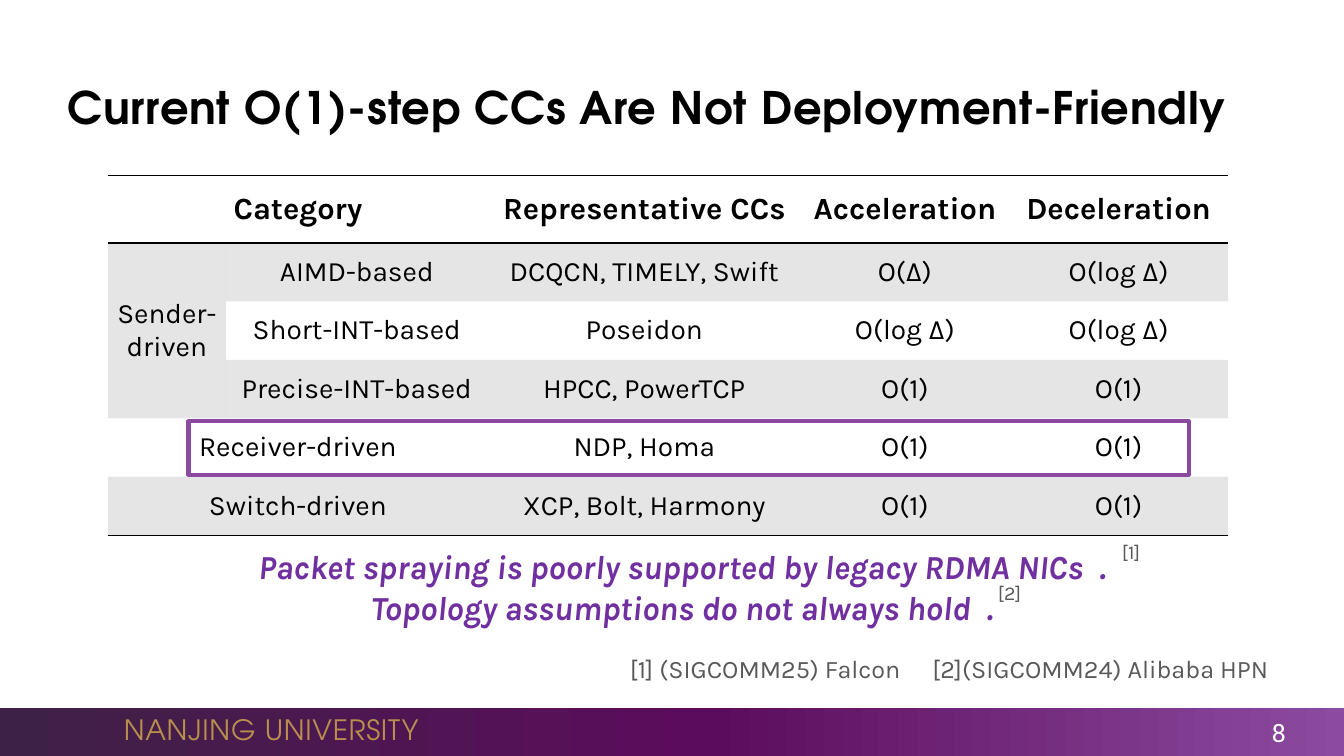
from copy import deepcopy
from lxml.etree import SubElement
from pptx import Presentation
from pptx.dml.color import RGBColor
from pptx.enum.shapes import MSO_SHAPE
from pptx.enum.text import MSO_ANCHOR, MSO_AUTO_SIZE, PP_ALIGN
from pptx.oxml import parse_xml
from pptx.oxml.ns import nsdecls, qn
from pptx.util import Inches, Pt

BLACK = RGBColor(0, 0, 0)
WHITE = RGBColor(255, 255, 255)
GRAY = RGBColor(0x59, 0x59, 0x59)
BAND = RGBColor(0x80, 0x80, 0x80)
GOLD = RGBColor(0xB8, 0x8F, 0x4C)
VIOLET = RGBColor(0x70, 0x30, 0xA0)
FRAME = RGBColor(0x8B, 0x4A, 0x9F)
FOOTER_STOPS = [
    (0, RGBColor(0x3E, 0x21, 0x46)),
    (0.53, RGBColor(0x5C, 0x0C, 0x5C)),
    (1, RGBColor(0x8C, 0x4B, 0xA0)),
]
NO_STYLE = "{2D5ABB26-0587-4C30-8999-92F81FD0307C}"

presentation = Presentation()
presentation.slide_width = Inches(13.33)
presentation.slide_height = Inches(7.5)
slide = presentation.slides.add_slide(presentation.slide_layouts[5])


def format_text(frame, size, font, color, align=PP_ALIGN.LEFT, bold=False, spacing=0):
    for paragraph in frame.paragraphs:
        paragraph.alignment = align
        for run in paragraph.runs:
            run.font.size = Pt(size)
            run.font.name = font
            run.font.color.rgb = color
            run.font.bold = bold
            if spacing:
                run.font._element.set("spc", str(spacing))


def add_text(box, text, anchor=MSO_ANCHOR.TOP, wrap=True):
    frame = slide.shapes.add_textbox(*map(Inches, box)).text_frame
    frame.word_wrap = wrap
    frame.vertical_anchor = anchor
    frame.text = text
    return frame


footer = slide.shapes.add_shape(
    MSO_SHAPE.RECTANGLE, Inches(0), Inches(7.02), Inches(13.33), Inches(0.48))
footer.shadow.inherit = False
footer.line.fill.background()
footer.fill.gradient()
footer.fill.gradient_angle = 0
stop_list = footer._element.spPr.find(".//" + qn("a:gsLst"))
stop_list.insert(1, deepcopy(stop_list[0]))
for stop, (position, color) in zip(footer.fill.gradient_stops, FOOTER_STOPS):
    stop.position = position
    stop.color.rgb = color

university = add_text((1.13, 7.02, 3.17, 0.44), "NANJING UNIVERSITY", MSO_ANCHOR.MIDDLE, False)
format_text(university, 20, "TeX Gyre Adventor", GOLD, spacing=50)
page_number = add_text((11.79, 7.09, 1.06, 0.35), "8", MSO_ANCHOR.MIDDLE)
format_text(page_number, 18, "Roboto Slab", WHITE, PP_ALIGN.RIGHT)

title = slide.shapes.title
title.left, title.top, title.width, title.height = map(Inches, (0.57, 0.67, 12, 0.77))
title.text_frame.text = "Current O(1)-step CCs Are Not Deployment-Friendly"
title.text_frame.auto_size = MSO_AUTO_SIZE.NONE
title.text_frame.vertical_anchor = MSO_ANCHOR.MIDDLE
format_text(title.text_frame, 32, "TeX Gyre Adventor", BLACK, bold=True, spacing=50)

ROW_HEIGHTS = [0.67] + [0.58] * 5
category_rows = [
    ["Category", ""],
    ["Sender-driven", "AIMD-based"],
    ["", "Short-INT-based"],
    ["", "Precise-INT-based"],
    ["Receiver-driven", ""],
    ["Switch-driven", ""],
]
algorithm_rows = [
    ["Representative CCs"],
    ["DCQCN, TIMELY, Swift"],
    ["Poseidon"],
    ["HPCC, PowerTCP"],
    ["NDP, Homa"],
    ["XCP, Bolt, Harmony"],
]
speed_rows = [
    ["Acceleration", "Deceleration"],
    ["O(Δ)", "O(log Δ)"],
    ["O(log Δ)", "O(log Δ)"],
    ["O(1)", "O(1)"],
    ["O(1)", "O(1)"],
    ["O(1)", "O(1)"],
]
category_merges = [((0, 0), (0, 1)), ((1, 0), (3, 0)), ((4, 0), (4, 1)), ((5, 0), (5, 1))]
sections = [
    (1.07, [1.17, 2.6], category_rows, category_merges),
    (4.84, [3.1], algorithm_rows, []),
    (7.94, [2.07, 2.17], speed_rows, []),
]

for left, widths, rows, merges in sections:
    table = slide.shapes.add_table(
        len(rows), len(widths), Inches(left), Inches(1.74),
        Inches(sum(widths)), Inches(sum(ROW_HEIGHTS))).table
    table.first_row = False
    table.horz_banding = False
    table._tbl.tblPr.find(qn("a:tableStyleId")).text = NO_STYLE
    for column, width in zip(table.columns, widths):
        column.width = Inches(width)
    for row, height in zip(table.rows, ROW_HEIGHTS):
        row.height = Inches(height)
    for first, last in merges:
        table.cell(*first).merge(table.cell(*last))

    for row_index, row in enumerate(rows):
        header = row_index == 0
        for column_index, text in enumerate(row):
            cell = table.cell(row_index, column_index)
            cell.text = text
            cell.vertical_anchor = MSO_ANCHOR.MIDDLE
            format_text(cell.text_frame, 22 if header else 20, "Karla", BLACK,
                        PP_ALIGN.CENTER, bold=header)
            if not header:
                cell.margin_left = cell.margin_right = Inches(0.03)
                cell.margin_top = cell.margin_bottom = Inches(0.03)
            if row_index % 2:
                cell.fill.solid()
                cell.fill.fore_color.rgb = BAND
            else:
                cell.fill.background()
            if row_index == len(rows) - 1:
                cell.fill.solid()
                cell.fill.fore_color.rgb = BAND
            properties = cell._tc.get_or_add_tcPr()
            for shade in properties.iter(qn("a:srgbClr")):
                SubElement(shade, qn("a:alpha")).set("val", "20000")
            edges = {0: ["lnT", "lnB"], len(rows) - 1: ["lnB"]}.get(row_index, [])
            for position, edge in enumerate(edges):
                properties.insert(position, parse_xml(
                    f'<a:{edge} {nsdecls("a")} w="12700"><a:solidFill>'
                    f'<a:srgbClr val="{BLACK}"/></a:solidFill></a:{edge}>'))

receiver_frame = slide.shapes.add_shape(
    MSO_SHAPE.RECTANGLE, Inches(1.87), Inches(4.18), Inches(9.92), Inches(0.53))
receiver_frame.shadow.inherit = False
receiver_frame.fill.background()
receiver_frame.line.color.rgb = FRAME
receiver_frame.line.width = Pt(3)

limitations = add_text(
    (1.83, 5.37, 9.87, 0.91),
    "Packet spraying is poorly supported by legacy RDMA NICs\n"
    "Topology assumptions do not always hold")
for paragraph in limitations.paragraphs:
    for ending in (" ", "."):
        paragraph.add_run().text = ending
format_text(limitations, 24, "Karla", VIOLET, PP_ALIGN.CENTER, bold=True)
for paragraph in limitations.paragraphs:
    for run in paragraph.runs:
        run.font.italic = True
    paragraph.runs[1].font._element.set("spc", "600")

notes = [
    ((6.15, 6.43, 6.6, 0.4), "[1] (SIGCOMM25) Falcon\t[2](SIGCOMM24) Alibaba HPN", 18),
    ((11.03, 5.31, 0.5, 0.34), "[1]", 14),
    ((9.8, 5.71, 0.5, 0.34), "[2]", 14),
]
for box, text, size in notes:
    format_text(add_text(box, text), size, "Karla", GRAY)

presentation.save("out.pptx")
